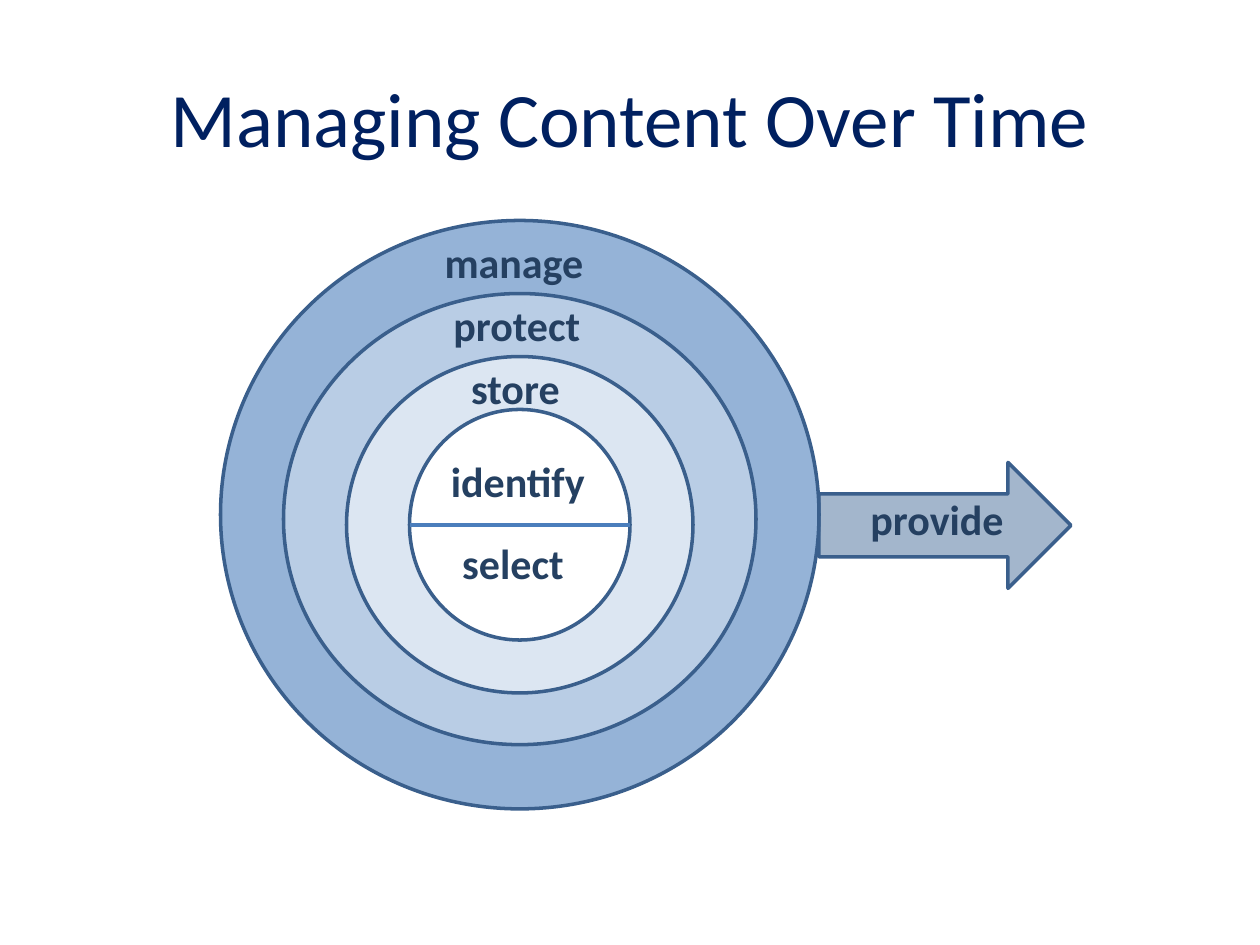
"""Build the slide on managing content over time."""
from dataclasses import dataclass

import pptx
import pptx.dml.color
import pptx.enum.shapes
import pptx.enum.text
import pptx.oxml
import pptx.oxml.ns
import pptx.util
from pptx.util import Inches

SHAPE = pptx.enum.shapes.MSO_SHAPE


@dataclass(frozen=True)
class Theme:
    font: str = "Calibri"
    title: str = "002060"
    label: str = "254061"
    outline: str = "3A5F8C"
    divider: str = "4B7EBC"
    arrow: str = "376092"
    manage: str = "95B3D7"
    protect: str = "B9CDE5"
    store: str = "DCE6F2"
    core: str = "FFFFFF"
    title_size: int = 44
    label_size: int = 24
    outline_width: float = 2
    divider_width: float = 2.25


THEME = Theme()
RINGS = [
    (1.75, 1.75, 4.75, 4.67, THEME.manage),
    (2.25, 2.33, 3.75, 3.58, THEME.protect),
    (2.75, 2.83, 2.75, 2.67, THEME.store),
    (3.25, 3.25, 1.75, 1.83, THEME.core),
]
LABELS = [
    ("identify", 3.48, 3.57, 1.28),
    ("select", 3.57, 4.22, 1.02),
    ("store", 3.64, 2.83, 0.91),
    ("protect", 3.5, 2.33, 1.22),
    ("manage", 3.43, 1.83, 1.32),
    ("provide", 6.81, 3.87, 1.27),
]


def rgb(value):
    return pptx.dml.color.RGBColor.from_string(value)


def write(tf, text, size, color, bold=False):
    r = tf.paragraphs[0].add_run()
    r.text = text
    formats = {"name": THEME.font, "size": pptx.util.Pt(size), "bold": bold}
    for name, value in formats.items():
        setattr(r.font, name, value)
    r.font.color.rgb = rgb(color)


def add_title(s, text):
    sp = s.shapes.title
    box = {"left": 0.5, "top": 0.3, "width": 9, "height": 1.25}
    for name, value in box.items():
        setattr(sp, name, Inches(value))
    tf = sp.text_frame
    tf.vertical_anchor = pptx.enum.text.MSO_ANCHOR.MIDDLE
    write(tf, text, THEME.title_size, THEME.title)
    tf.paragraphs[0].alignment = pptx.enum.text.PP_ALIGN.CENTER


def add_filled(s, kind, left, top, width, height, color):
    sp = s.shapes.add_shape(kind, *map(Inches, (left, top, width, height)))
    sp.shadow.inherit = False
    sp.fill.solid()
    sp.fill.fore_color.rgb = rgb(color)
    sp.line.color.rgb = rgb(THEME.outline)
    sp.line.width = pptx.util.Pt(THEME.outline_width)
    return sp


def set_opacity(sp, percent):
    qn = pptx.oxml.ns.qn
    clr = sp.fill._xPr.find(qn("a:solidFill")).find(qn("a:srgbClr"))
    alpha = pptx.oxml.parse_xml(
        f'<a:alpha {pptx.oxml.ns.nsdecls("a")} val="{percent * 1000}"/>')
    clr.append(alpha)


def add_divider(s, left, right, y):
    line = s.shapes.add_connector(
        pptx.enum.shapes.MSO_CONNECTOR.STRAIGHT,
        *map(Inches, (left, y, right, y)))
    line.line.color.rgb = rgb(THEME.divider)
    line.line.width = pptx.util.Pt(THEME.divider_width)
    line._element.spPr.append(pptx.oxml.parse_xml(
        f'<a:effectLst {pptx.oxml.ns.nsdecls("a")}/>'))


def add_label(s, text, left, top, width):
    sp = s.shapes.add_textbox(*map(Inches, (left, top, width, 0.5)))
    tf = sp.text_frame
    formats = {"word_wrap": False,
               "auto_size": pptx.enum.text.MSO_AUTO_SIZE.SHAPE_TO_FIT_TEXT}
    for name, value in formats.items():
        setattr(tf, name, value)
    write(tf, text, THEME.label_size, THEME.label, bold=True)


def main():
    prs = pptx.Presentation()
    prs.slide_width, prs.slide_height = Inches(10), Inches(7.5)
    s = prs.slides.add_slide(prs.slide_layouts[5])
    add_title(s, "Managing Content Over Time")
    for ring in RINGS:
        add_filled(s, SHAPE.OVAL, *ring)
    arrow = add_filled(s, SHAPE.RIGHT_ARROW, 6.5, 3.67, 2, 1, THEME.arrow)
    set_opacity(arrow, 46)
    add_divider(s, 3.25, 5, 4.17)
    for label in LABELS:
        add_label(s, *label)
    prs.save("out.pptx")


if __name__ == "__main__":
    main()
